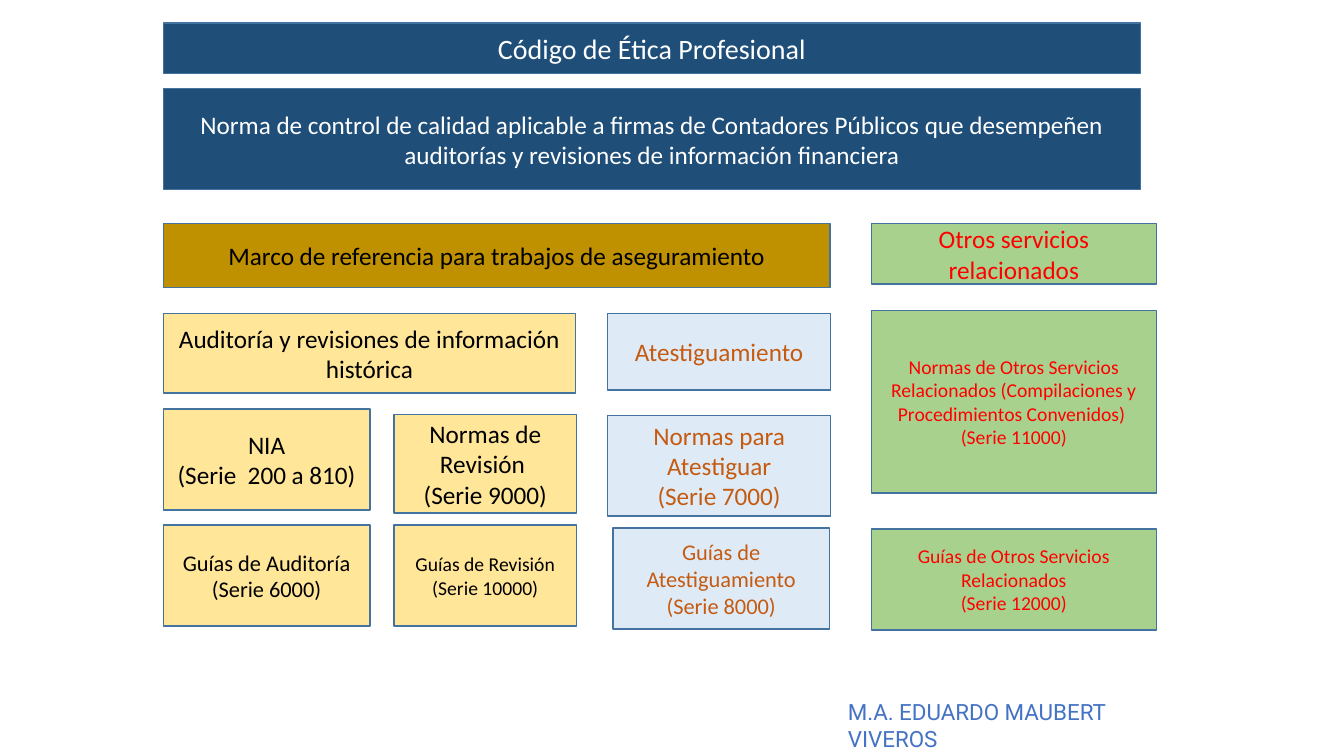
from dataclasses import dataclass

import pptx
import pptx.dml.color
import pptx.enum.shapes
import pptx.enum.text
import pptx.util

SLIDE_WIDTH, SLIDE_HEIGHT = 13.33, 7.5
COLUMNS, ROWS = 40, 30


@dataclass(frozen=True)
class Theme:
    font: str = "Calibri"
    author_font: str = "Roboto"
    outline: str = "43739E"
    author: str = "4472C4"
    # Fill and text colour of each family of boxes
    ethics: tuple = ("1F4E79", "FFFFFF")
    framework: tuple = ("BF9000", "000000")
    audit: tuple = ("FFE699", "000000")
    attestation: tuple = ("DEEBF7", "C55A11")
    related: tuple = ("A9D18E", "FF0000")
    # Type sizes
    title: int = 20
    large: int = 18
    medium: int = 16
    small: int = 14


THEME = Theme()


@dataclass(frozen=True)
class Box:
    """Area measured in grid columns and rows."""
    left: float
    top: float
    width: float
    height: float

    def inner(self, left, top, width, height):
        return Box(self.left + left, self.top + top, width, height)

    def lengths(self):
        column, row = SLIDE_WIDTH / COLUMNS, SLIDE_HEIGHT / ROWS
        return [pptx.util.Inches(value) for value in (
            self.left * column, self.top * row,
            self.width * column, self.height * row)]


def color(value):
    return pptx.dml.color.RGBColor.from_string(value)


def write(text_frame, text, font, size, text_color, alignment):
    text_frame.word_wrap = True
    text_frame.text = text
    for paragraph in text_frame.paragraphs:
        paragraph.alignment = alignment
        paragraph.font.name = font
        paragraph.font.size = pptx.util.Pt(size)
        paragraph.font.color.rgb = color(text_color)


def add_block(slide, box, text, colors, size=THEME.large):
    fill, text_color = colors
    shape = slide.shapes.add_shape(
        pptx.enum.shapes.MSO_SHAPE.RECTANGLE, *box.lengths())
    shape.shadow.inherit = False
    shape.fill.solid()
    shape.fill.fore_color.rgb = color(fill)
    shape.line.color.rgb = color(THEME.outline)
    shape.line.width = pptx.util.Pt(1)
    shape.text_frame.vertical_anchor = pptx.enum.text.MSO_ANCHOR.MIDDLE
    write(shape.text_frame, text, THEME.font, size, text_color,
          pptx.enum.text.PP_ALIGN.CENTER)


def add_ethics(slide, box):
    add_block(slide, box.inner(0, 0, box.width, 2),
              "Código de Ética Profesional", THEME.ethics, THEME.title)
    add_block(slide, box.inner(0, 2.6, box.width, 4),
              "Norma de control de calidad aplicable a firmas de Contadores "
              "Públicos que desempeñen auditorías y revisiones de "
              "información financiera", THEME.ethics)


def add_assurance(slide, box):
    add_block(slide, box.inner(0, 0, box.width, 2.52),
              "Marco de referencia para trabajos de aseguramiento",
              THEME.framework)

    # Audits and reviews: heading, standards, guides
    audit_blocks = [
        (0, 3.56, 12.27, 3.16,
         "Auditoría y revisiones de información histórica", THEME.large),
        (0, 7.36, 6.15, 4, "NIA\n(Serie  200 a 810)", THEME.large),
        (6.87, 7.56, 5.43, 3.92,
         "Normas de Revisión \n(Serie 9000)", THEME.large),
        (0, 11.96, 6.15, 4, "Guías de Auditoría\n(Serie 6000)", THEME.medium),
        (6.87, 11.96, 5.43, 4, "Guías de Revisión\n(Serie 10000)", THEME.small),
    ]
    # Attestation: heading, standards, guides
    attestation_blocks = [
        (13.23, 3.56, 6.63, 3.04, "Atestiguamiento", THEME.large),
        (13.23, 7.6, 6.63, 4,
         "Normas para Atestiguar\n(Serie 7000)", THEME.large),
        (13.38, 12.08, 6.45, 4,
         "Guías de Atestiguamiento\n(Serie 8000)", THEME.medium),
    ]
    for colors, blocks in ((THEME.audit, audit_blocks),
                           (THEME.attestation, attestation_blocks)):
        for left, top, width, height, text, size in blocks:
            add_block(slide, box.inner(left, top, width, height),
                      text, colors, size)


def add_related_services(slide, box):
    blocks = [
        (0, 2.4, "Otros servicios relacionados", THEME.large),
        (3.44, 7.24, "Normas de Otros Servicios Relacionados (Compilaciones y "
         "Procedimientos Convenidos) \n(Serie 11000)", THEME.small),
        (12.12, 4, "Guías de Otros Servicios Relacionados\n(Serie 12000)",
         THEME.small),
    ]
    for top, height, text, size in blocks:
        add_block(slide, box.inner(0, top, box.width, height),
                  text, THEME.related, size)


def add_author(slide, box):
    text_box = slide.shapes.add_textbox(*box.lengths())
    write(text_box.text_frame, "M.A. EDUARDO MAUBERT VIVEROS",
          THEME.author_font, THEME.medium, THEME.author,
          pptx.enum.text.PP_ALIGN.LEFT)


def main():
    presentation = pptx.Presentation()
    presentation.slide_width = pptx.util.Inches(SLIDE_WIDTH)
    presentation.slide_height = pptx.util.Inches(SLIDE_HEIGHT)
    slide = presentation.slides.add_slide(presentation.slide_layouts[6])
    add_ethics(slide, Box(4.86, 0.92, 29.08, 6.6))
    add_assurance(slide, Box(4.86, 8.88, 19.84, 16.08))
    add_related_services(slide, Box(25.93, 8.88, 8.49, 16.12))
    add_author(slide, Box(24.94, 27.52, 10.77, 1.48))
    presentation.save("out.pptx")


if __name__ == "__main__":
    main()
